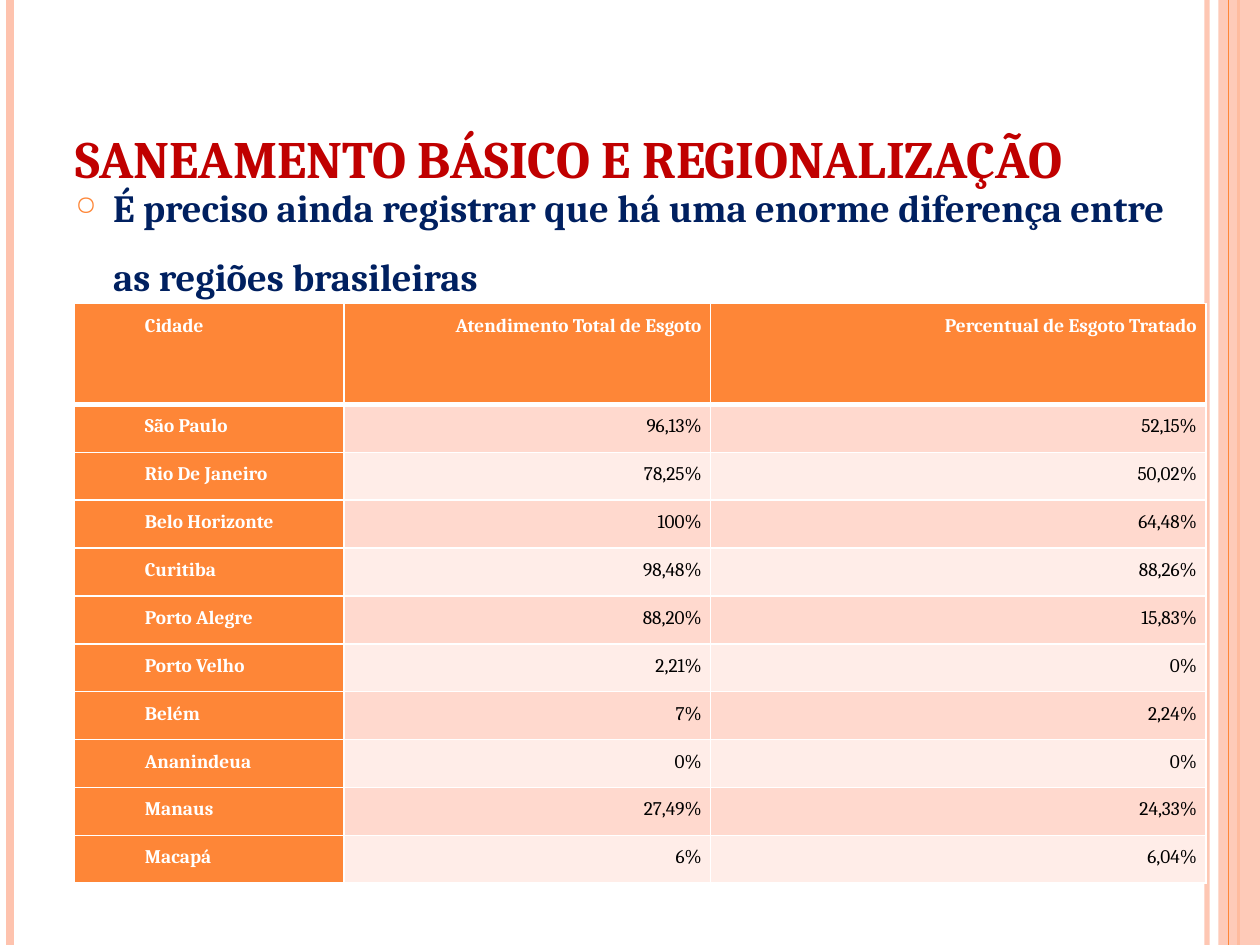
import pptx
import pptx.dml.color
import pptx.enum.shapes
import pptx.enum.text
import pptx.oxml
import pptx.oxml.ns
import pptx.util
from lxml import etree

Inches, Pt = pptx.util.Inches, pptx.util.Pt
ALIGN, ANCHOR = pptx.enum.text.PP_ALIGN, pptx.enum.text.MSO_ANCHOR
qn = pptx.oxml.ns.qn

COLORS = {
    "orange": "FE8637", "peach": "FEC3AE", "title": "C00000", "body": "002060",
    "white": "FFFFFF", "black": "000000", "band_dark": "FFD9CE", "band_light": "FFEDE8",
}

HEADER = ("Cidade", "Atendimento Total de Esgoto", "Percentual de Esgoto Tratado")
CITIES = [
    ("São Paulo", "96,13%", "52,15%"),
    ("Rio De Janeiro", "78,25%", "50,02%"),
    ("Belo Horizonte", "100%", "64,48%"),
    ("Curitiba", "98,48%", "88,26%"),
    ("Porto Alegre", "88,20%", "15,83%"),
    ("Porto Velho", "2,21%", "0%"),
    ("Belém", "7%", "2,24%"),
    ("Ananindeua", "0%", "0%"),
    ("Manaus", "27,49%", "24,33%"),
    ("Macapá", "6%", "6,04%"),
]


def rgb(name):
    return pptx.dml.color.RGBColor.from_string(COLORS[name])


def add_xml(parent, tag, **attrs):
    return etree.SubElement(parent, qn(tag), attrs)


class SlideBuilder:
    font = "Cambria"

    def __init__(self, prs):
        self.s = prs.slides.add_slide(prs.slide_layouts[5])
        self.height = prs.slide_height

    def style(self, p, size, color, bold=True):
        p.font.name, p.font.size, p.font.bold = self.font, Pt(size), bold
        p.font.color.rgb = rgb(color)

    def set_alpha(self, element, percent):
        add_xml(element.find(".//" + qn("a:srgbClr")), "a:alpha", val=str(percent * 1000))

    def vertical_line(self, x, color, width, alpha=100):
        line = self.s.shapes.add_connector(
            pptx.enum.shapes.MSO_CONNECTOR.STRAIGHT, Inches(x), 0, Inches(x), self.height)
        line.line.color.rgb = rgb(color)
        line.line.width = Pt(width)
        if alpha < 100:
            self.set_alpha(line._element.spPr, alpha)
        add_xml(line._element.spPr, "a:effectLst")

    def band(self, x, width, color, alpha):
        sp = self.s.shapes.add_shape(
            pptx.enum.shapes.MSO_SHAPE.RECTANGLE, Inches(x), 0, Inches(width), self.height)
        sp.shadow.inherit = False
        sp.fill.solid()
        sp.fill.fore_color.rgb = rgb(color)
        sp.line.fill.background()
        self.set_alpha(sp._element.spPr, alpha)

    def title(self, text, x, y, w, h):
        sp = self.s.shapes.title
        sp.left, sp.top, sp.width, sp.height = map(Inches, (x, y, w, h))
        tf = sp.text_frame
        tf.text = text
        tf.vertical_anchor = ANCHOR.BOTTOM
        tf.paragraphs[0].alignment = ALIGN.LEFT
        self.style(tf.paragraphs[0], 30, "title")

    def bullet(self, text, x, y, w, h):
        tf = self.s.shapes.add_textbox(*map(Inches, (x, y, w, h))).text_frame
        tf.word_wrap = True
        p = tf.paragraphs[0]
        p.text = text
        p.line_spacing = 1.5
        p.space_before = Pt(6)
        pPr = p._p.get_or_add_pPr()
        pPr.set("marL", str(Inches(0.3)))
        pPr.set("indent", str(-Inches(0.3)))
        add_xml(add_xml(pPr, "a:buClr"), "a:srgbClr", val=COLORS["orange"])
        add_xml(pPr, "a:buSzPct", val="70000")
        add_xml(pPr, "a:buChar", char="○")
        self.style(p, 22, "body")

    def cell(self, cell, text, fill, color, align, bold, bottom):
        # Borders come before the fill in the cell properties
        tcPr = cell._tc.get_or_add_tcPr()
        for side, width in (("L", 1), ("R", 1), ("T", 1), ("B", bottom)):
            ln = add_xml(tcPr, "a:ln" + side, w=str(Pt(width)))
            add_xml(add_xml(ln, "a:solidFill"), "a:srgbClr", val=COLORS["white"])
        cell.fill.solid()
        cell.fill.fore_color.rgb = rgb(fill)
        cell.margin_left = cell.margin_right = Inches(0.07)
        cell.margin_top = cell.margin_bottom = 0
        p = cell.text_frame.paragraphs[0]
        p.text = text
        p.alignment = align
        p.line_spacing = 1.5
        p.space_after = Pt(6)
        p._p.get_or_add_pPr().set("indent", str(Inches(0.49)))
        self.style(p, 11, color, bold)

    def table(self, rows, x, y, widths, header_height, row_height):
        height = header_height + row_height * (len(rows) - 1)
        table = self.s.shapes.add_table(
            len(rows), len(widths), Inches(x), Inches(y),
            Inches(sum(widths)), Inches(height)).table
        for column, width in zip(table.columns, widths):
            column.width = Inches(width)
        for i, values in enumerate(rows):
            table.rows[i].height = Inches(row_height if i else header_height)
            for j, text in enumerate(values):
                heading = i == 0 or j == 0
                band = "band_dark" if i % 2 else "band_light"
                self.cell(table.cell(i, j), text,
                          fill="orange" if heading else band,
                          color="white" if heading else "black",
                          align=ALIGN.RIGHT if j else ALIGN.JUSTIFY,
                          bold=heading, bottom=1 if i else 3)


def main():
    prs = pptx.Presentation()
    prs.slide_width, prs.slide_height = Inches(10), Inches(7.5)
    slide = SlideBuilder(prs)

    # Side stripes
    slide.vertical_line(9.58, "peach", 3, alpha=93)
    slide.vertical_line(0.08, "peach", 4.5)
    slide.vertical_line(9.83, "orange", 1.5)
    slide.band(9.67, 0.33, "peach", alpha=87)
    slide.vertical_line(9.75, "orange", 0.75)

    # Title and statement
    slide.title("SANEAMENTO BÁSICO E REGIONALIZAÇÃO", 0.5, 0.3, 8.17, 1.25)
    slide.bullet("É preciso ainda registrar que há uma enorme diferença entre "
                 "as regiões brasileiras", 0.5, 1.23, 9, 5.47)

    # Sewage coverage by city
    slide.table([HEADER] + CITIES, 0.59, 2.41, (2.14, 2.91, 3.93), 0.8, 0.38)

    prs.save("out.pptx")


if __name__ == "__main__":
    main()
